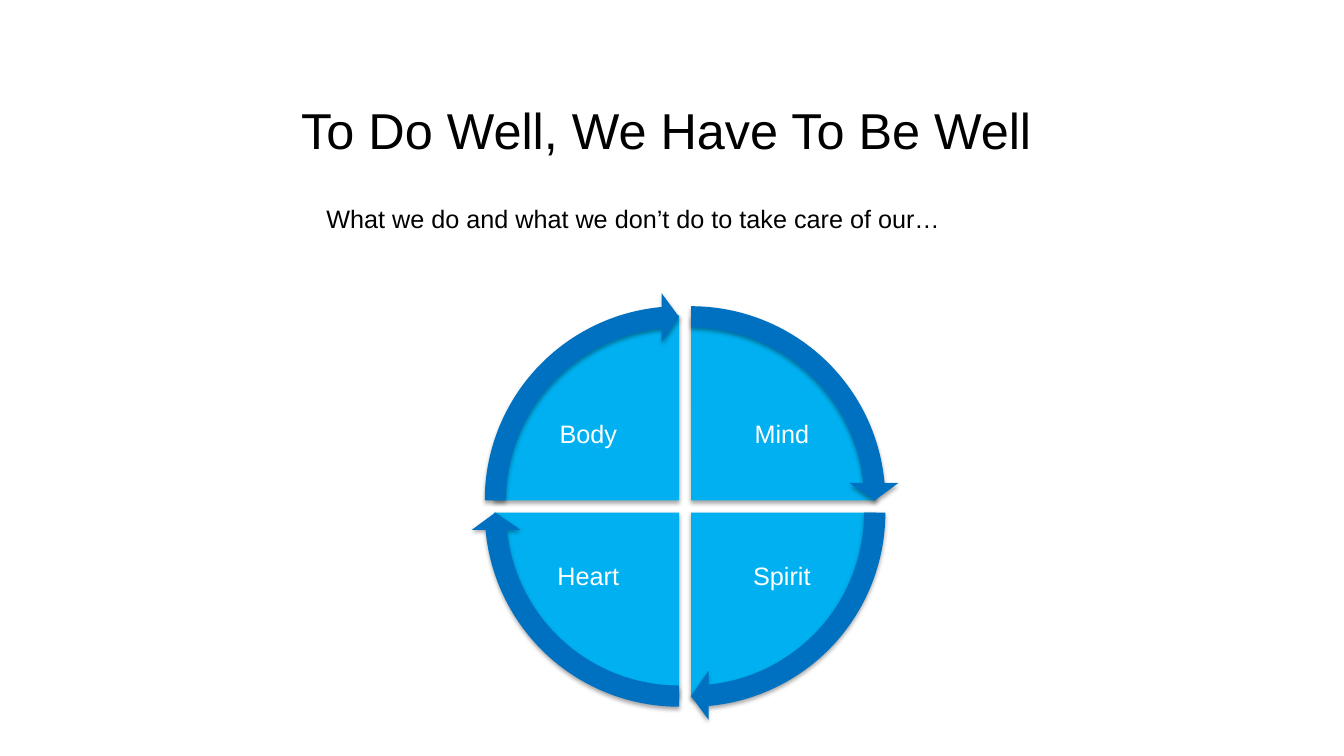
from lxml.etree import SubElement
from pptx import Presentation
from pptx.dml.color import RGBColor
from pptx.enum.shapes import MSO_SHAPE
from pptx.enum.text import MSO_ANCHOR, PP_ALIGN
from pptx.oxml.ns import qn
from pptx.util import Pt

PX = 9144
COLORS = {"text": "000000", "label": "FFFFFF", "quadrant": "00B0F0", "arrow": "0070C0", "shadow": "000000"}
FONT = "Arial"
QUARTER_TURN = 54
ARROW_SWEEP = 50.725
QUADRANTS = [("Mind", 1, 0, 3), ("Spirit", 1, 1, 0), ("Heart", 0, 1, 1), ("Body", 0, 0, 2)]


def write_text(shape, text, size=18, color="text", insets=(10, 5, 10, 5), anchor=MSO_ANCHOR.TOP, spacing=None):
    frame = shape.text_frame
    frame.word_wrap = True
    frame.vertical_anchor = anchor
    frame.margin_left, frame.margin_top, frame.margin_right, frame.margin_bottom = [inset * PX for inset in insets]
    para = frame.paragraphs[0]
    para.alignment = PP_ALIGN.CENTER
    if spacing:
        para.line_spacing = spacing
    span = para.add_run()
    span.text = text
    span.font.size = Pt(size)
    span.font.name = FONT
    span.font.color.rgb = RGBColor.from_string(COLORS[color])


def add_text(page, box, text, **style):
    write_text(page.shapes.add_textbox(*[length * PX for length in box]), text, **style)


def add_soft_shadow(shape):
    shape.shadow.inherit = False
    effects = shape.element.spPr.find(qn("a:effectLst"))
    shadow = SubElement(effects, qn("a:outerShdw"), blurRad="40000", dist="23000", dir="5400000", rotWithShape="0")
    color = SubElement(shadow, qn("a:srgbClr"), val=COLORS["shadow"])
    SubElement(color, qn("a:alpha"), val="35000")


def add_round(page, kind, box, color, adjustments):
    shape = page.shapes.add_shape(kind, *[length * PX for length in box])
    for index, value in enumerate(adjustments):
        shape.adjustments[index] = value
    shape.fill.solid()
    shape.fill.fore_color.rgb = RGBColor.from_string(COLORS[color])
    shape.line.fill.background()
    add_soft_shadow(shape)
    return shape


def add_cycle(page, left, top, size, gap=12, overhang=23):
    near, far = 37, 166
    for label, column, row, turn in QUADRANTS:
        start = turn * QUARTER_TURN
        end = (turn + 1) % 4 * QUARTER_TURN
        box = (left + column * gap, top + row * gap, size, size)
        quadrant = add_round(page, MSO_SHAPE.PIE, box, "quadrant", (start, end))
        insets = (180 * column, far if row else near, 180 * (1 - column), near if row else far)
        write_text(quadrant, label, color="label", insets=insets, anchor=MSO_ANCHOR.MIDDLE, spacing=0.9)
    for label, column, row, turn in QUADRANTS:
        start = turn * QUARTER_TURN
        outer = size + 2 * overhang
        box = (left + column * gap - overhang, top + row * gap - overhang, outer, outer)
        add_round(page, MSO_SHAPE.CIRCULAR_ARROW, box, "arrow", (0.051, 3.275, start + ARROW_SWEEP, start, 0.059))


def main():
    deck = Presentation()
    deck.slide_width, deck.slide_height = 1333 * PX, 750 * PX
    page = deck.slides.add_slide(deck.slide_layouts[6])
    add_text(page, (211, 86, 900, 108), "To Do Well, We Have To Be Well", size=36, insets=(10, 12, 10, 5))
    add_cycle(page, 490, 313, 367)
    add_text(page, (210, 197, 836, 40), "What we do and what we don’t do to take care of our…")
    deck.save("out.pptx")


if __name__ == "__main__":
    main()
